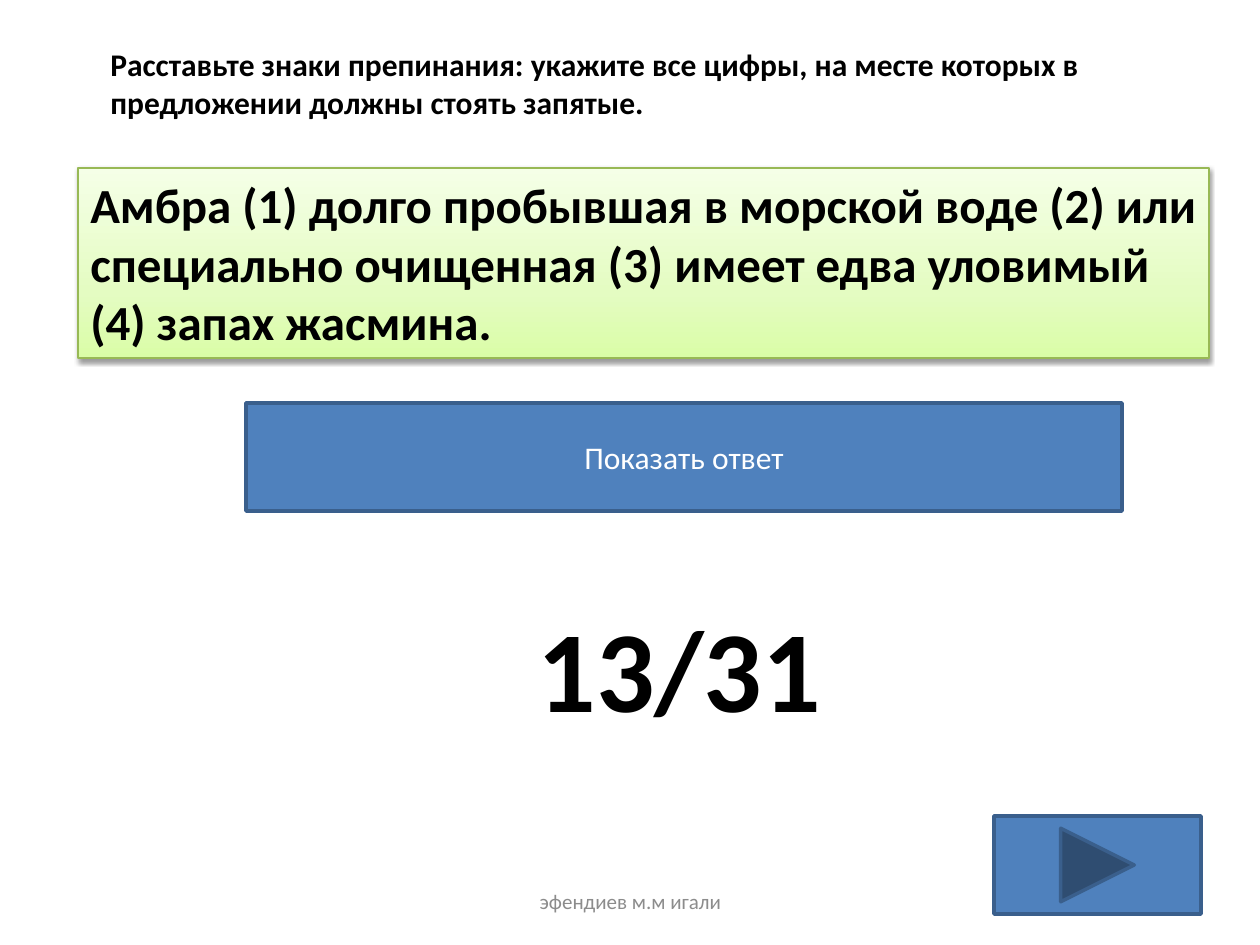
import pptx
import pptx.util
import pptx.dml.color
import pptx.enum.shapes
import pptx.enum.text
import pptx.oxml
import pptx.oxml.ns

SCALE = 914400 / 126  # EMU per px
FONT = "Calibri"
COLORS = {
    "ink": "000000", "white": "FFFFFF", "footer": "8C8C8C",
    "button": "4F81BD", "button_edge": "3A5F8C", "card_edge": "98B955",
}
CARD_STOPS = [(0, "DAFDA7"), (35, "E4FCC2"), (100, "F5FFE7")]
CARD_SHADOW = {"blur": 3.1, "distance": 1.6, "angle": 90, "opacity": 38}

SHAPE = pptx.enum.shapes.MSO_SHAPE
ALIGN = pptx.enum.text.PP_ALIGN
ANCHOR = pptx.enum.text.MSO_ANCHOR

# Boxes are left, top, width, height in px
TASK = {
    "box": (98, 39, 1113, 89), "size": 18, "bold": True,
    "text": "Расставьте знаки препинания: укажите все цифры, на месте которых "
            "в предложении должны стоять запятые.",
}
SENTENCE = {
    "box": (78, 168, 1131, 190), "size": 28, "bold": True,
    "text": "Амбра (1) долго пробывшая в морской воде (2) или специально "
            "очищенная (3) имеет едва уловимый (4) запах жасмина.",
}
SHOW_ANSWER = {
    "box": (246, 403, 876, 108), "size": 18, "color": "white",
    "align": ALIGN.CENTER, "anchor": ANCHOR.MIDDLE, "text": "Показать ответ",
}
ANSWER = {
    "box": (246, 591, 867, 152), "size": 66, "bold": True,
    "align": ALIGN.CENTER, "text": "13/31",
}
FOOTER = {
    "box": (431, 876, 399, 50), "size": 12, "color": "footer",
    "align": ALIGN.CENTER, "anchor": ANCHOR.MIDDLE, "text": "эфендиев м.м игали",
}
NEXT_BOX = (994, 816, 207, 98)


def emu(box):
    return [round(length * SCALE) for length in box]


def rgb(value):
    return pptx.dml.color.RGBColor.from_string(value)


def write(shape, content):
    frame = shape.text_frame
    frame.word_wrap = True
    frame.vertical_anchor = content.get("anchor", ANCHOR.TOP)
    paragraph = frame.paragraphs[0]
    paragraph.alignment = content.get("align", ALIGN.LEFT)
    run = paragraph.add_run()
    run.text = content["text"]
    run.font.name = FONT
    run.font.size = pptx.util.Pt(content["size"])
    run.font.bold = content.get("bold", False)
    run.font.color.rgb = rgb(COLORS[content.get("color", "ink")])


def add_text(slide, content):
    write(slide.shapes.add_textbox(*emu(content["box"])), content)


def add_outlined(slide, kind, box, edge, width):
    shape = slide.shapes.add_shape(kind, *emu(box))
    shape.shadow.inherit = False
    shape.line.color.rgb = rgb(COLORS[edge])
    shape.line.width = pptx.util.Pt(width)
    return shape


def add_button(slide, kind, box):
    button = add_outlined(slide, kind, box, "button_edge", 2)
    button.fill.solid()
    button.fill.fore_color.rgb = rgb(COLORS["button"])
    return button


def color_xml(tag, attributes, color, inner=""):
    return pptx.oxml.parse_xml(
        f'<a:{tag} {pptx.oxml.ns.nsdecls("a")} {attributes}>'
        f'<a:srgbClr val="{color}">{inner}</a:srgbClr></a:{tag}>')


def add_card(slide, content):
    """Gradient card, lightest at the top, with a soft shadow below."""
    card = add_outlined(slide, SHAPE.RECTANGLE, content["box"], "card_edge", 0.75)
    card.fill.gradient()
    card.fill.gradient_angle = 90
    properties = card._element.spPr
    stops = properties.find(".//" + pptx.oxml.ns.qn("a:gsLst"))
    for stop in list(stops):
        stops.remove(stop)
    for position, color in CARD_STOPS:
        stops.append(color_xml("gs", f'pos="{position * 1000}"', color))
    blur, distance = (pptx.util.Pt(CARD_SHADOW[key]) for key in ("blur", "distance"))
    properties.find(pptx.oxml.ns.qn("a:effectLst")).append(color_xml(
        "outerShdw",
        f'blurRad="{blur}" dist="{distance}" dir="{CARD_SHADOW["angle"] * 60000}" '
        'rotWithShape="0"',
        COLORS["ink"], f'<a:alpha val="{CARD_SHADOW["opacity"] * 1000}"/>'))
    write(card, content)


def main():
    deck = pptx.Presentation()
    deck.slide_width = pptx.util.Inches(10)
    deck.slide_height = pptx.util.Inches(7.5)
    slide = deck.slides.add_slide(deck.slide_layouts[6])

    add_text(slide, TASK)
    add_card(slide, SENTENCE)
    write(add_button(slide, SHAPE.ACTION_BUTTON_CUSTOM, SHOW_ANSWER["box"]), SHOW_ANSWER)
    add_text(slide, ANSWER)
    add_text(slide, FOOTER)
    add_button(slide, SHAPE.ACTION_BUTTON_FORWARD_OR_NEXT, NEXT_BOX)
    deck.save("out.pptx")


if __name__ == "__main__":
    main()
